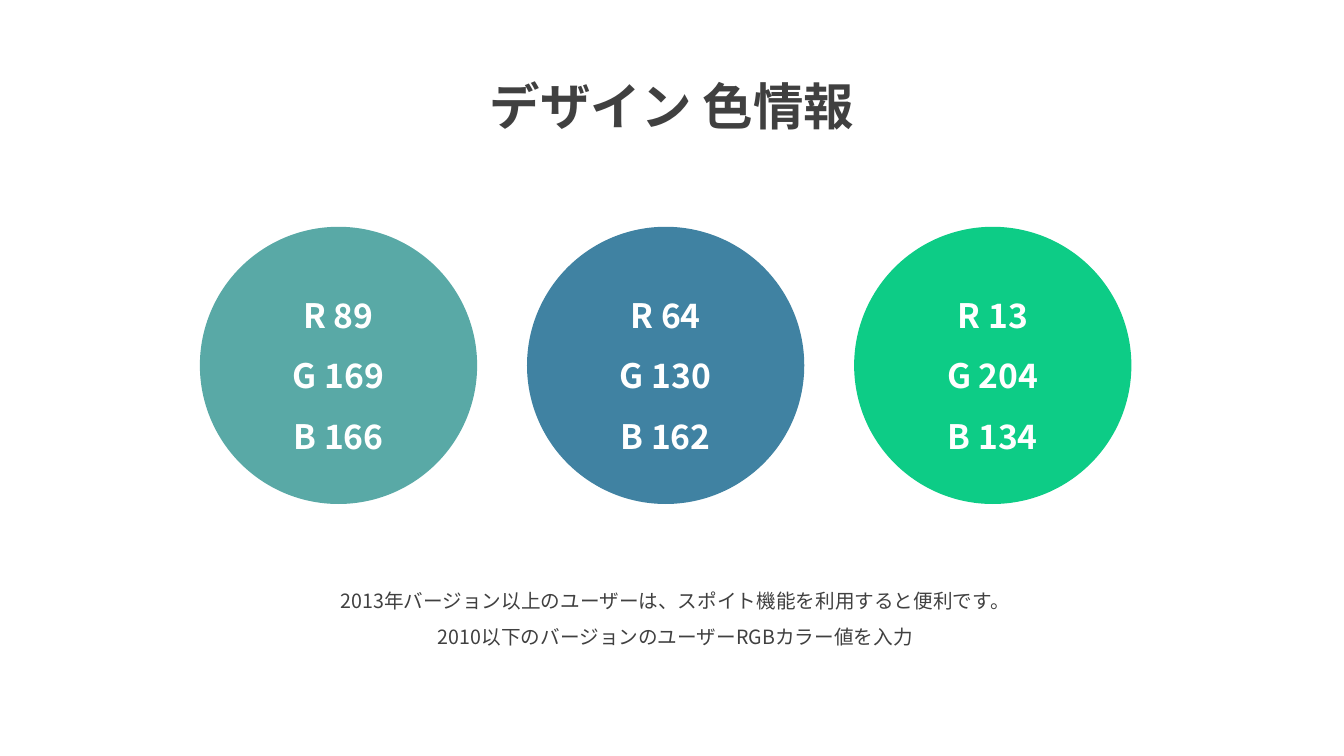
from dataclasses import dataclass

from lxml.etree import SubElement
from pptx import Presentation
from pptx.dml.color import RGBColor
from pptx.enum.shapes import MSO_SHAPE
from pptx.enum.text import MSO_ANCHOR, MSO_AUTO_SIZE, PP_ALIGN
from pptx.oxml.ns import qn
from pptx.util import Inches, Pt


@dataclass(frozen=True)
class Theme:
    """Colours, type sizes and typeface of the slide."""
    font: str = "Noto Sans CJK KR"
    ink: RGBColor = RGBColor(64, 64, 64)
    paper: RGBColor = RGBColor(255, 255, 255)
    palette: tuple = ((89, 169, 166), (64, 130, 162), (13, 204, 134))
    title_size: int = 36
    swatch_size: int = 24
    note_size: int = 14
    line_spacing: float = 1.5


class PaletteSlide:
    """Builds one slide, placing elements by percentages of its size."""

    def __init__(self, deck, theme):
        self.deck = deck
        self.theme = theme
        self.slide = deck.slides.add_slide(deck.slide_layouts[5])

    def area(self, left, top, width, height):
        """Turn percentages of the slide into lengths."""
        across, down = self.deck.slide_width, self.deck.slide_height
        return [round(share * side / 100) for share, side in
                zip((left, top, width, height), (across, down, across, down))]

    def set_text(self, frame, lines, size, colour, bold, anchor):
        """Fill a text frame with centred lines in one style."""
        frame.word_wrap = True
        frame.vertical_anchor = anchor
        frame.text = "\n".join(lines)
        for paragraph in frame.paragraphs:
            paragraph.alignment = PP_ALIGN.CENTER
            paragraph.line_spacing = self.theme.line_spacing
            font = paragraph.font
            font.size, font.bold, font.name = Pt(size), bold, self.theme.font
            font.color.rgb = colour
            defaults = paragraph._p.pPr.find(qn("a:defRPr"))
            SubElement(defaults, qn("a:ea"), typeface=self.theme.font)

    def title(self, text, *shares):
        """Place and format the title."""
        heading = self.slide.shapes.title
        heading.left, heading.top, heading.width, heading.height = self.area(*shares)
        self.set_text(heading.text_frame, [text], self.theme.title_size,
                      self.theme.ink, True, MSO_ANCHOR.TOP)
        heading.text_frame.auto_size = MSO_AUTO_SIZE.SHAPE_TO_FIT_TEXT

    def swatch(self, rgb, *shares):
        """Add a colour circle labelled with its own RGB values."""
        circle = self.slide.shapes.add_shape(MSO_SHAPE.OVAL, *self.area(*shares))
        circle.shadow.inherit = False
        circle.fill.solid()
        circle.fill.fore_color.rgb = RGBColor(*rgb)
        circle.line.fill.background()
        labels = [f"{channel} {value}" for channel, value in zip("RGB", rgb)]
        self.set_text(circle.text_frame, labels, self.theme.swatch_size,
                      self.theme.paper, True, MSO_ANCHOR.MIDDLE)

    def note(self, lines, *shares):
        """Add the explanatory lines."""
        advice = self.slide.shapes.add_textbox(*self.area(*shares))
        self.set_text(advice.text_frame, lines, self.theme.note_size,
                      self.theme.ink, False, MSO_ANCHOR.TOP)
        advice.text_frame.auto_size = MSO_AUTO_SIZE.SHAPE_TO_FIT_TEXT


def main():
    """Build and save the colour information slide."""
    deck = Presentation()
    deck.slide_width, deck.slide_height = Inches(13.33), Inches(7.5)
    theme = Theme()
    page = PaletteSlide(deck, theme)
    page.title("デザイン 色情報", 31.81, 5.33, 36.38, 12.13)
    first_left, pitch = 14.87, 24.34
    for column, rgb in enumerate(theme.palette):
        page.swatch(rgb, first_left + column * pitch, 30, 20.63, 36.67)
    page.note(["2013年バージョン以上のユーザーは、スポイト機能を利用すると便利です。",
               "2010以下のバージョンのユーザーRGBカラー値を入力"],
              18.9, 75.73, 62.72, 10.27)
    deck.save("out.pptx")


if __name__ == "__main__":
    main()
